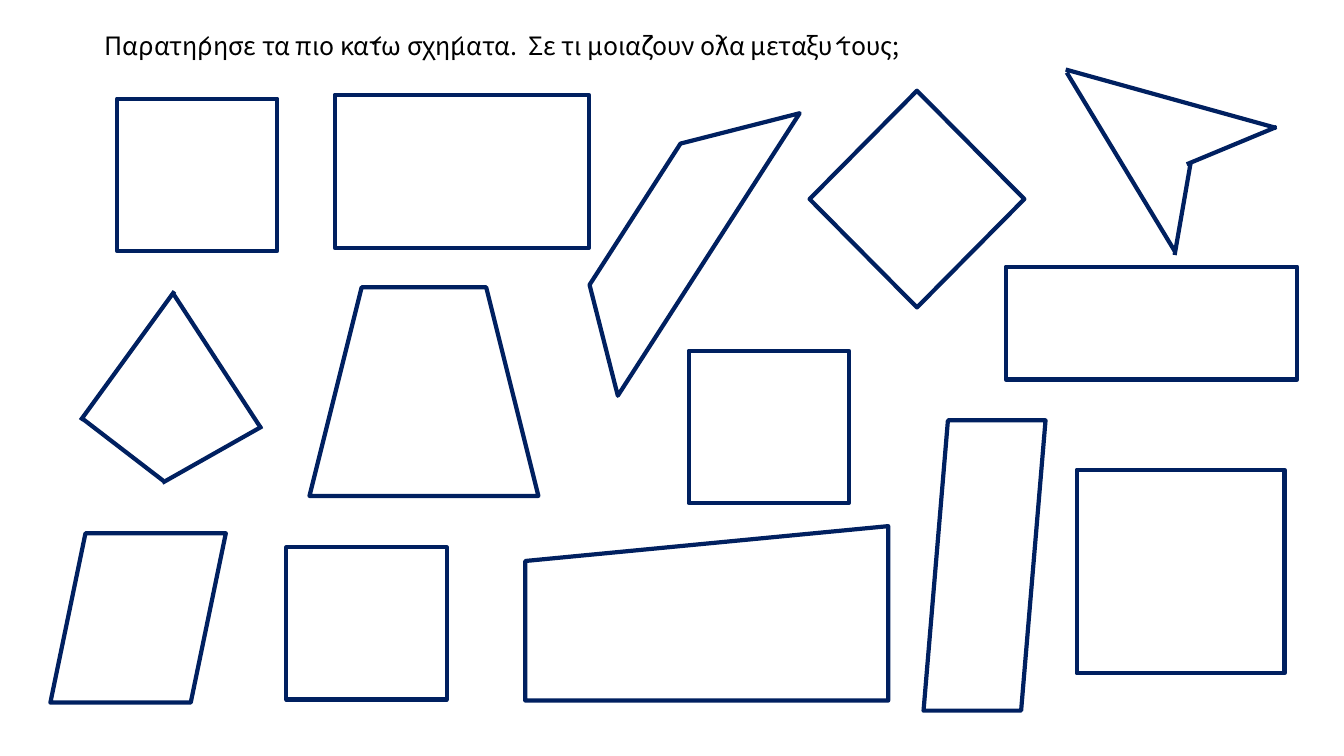
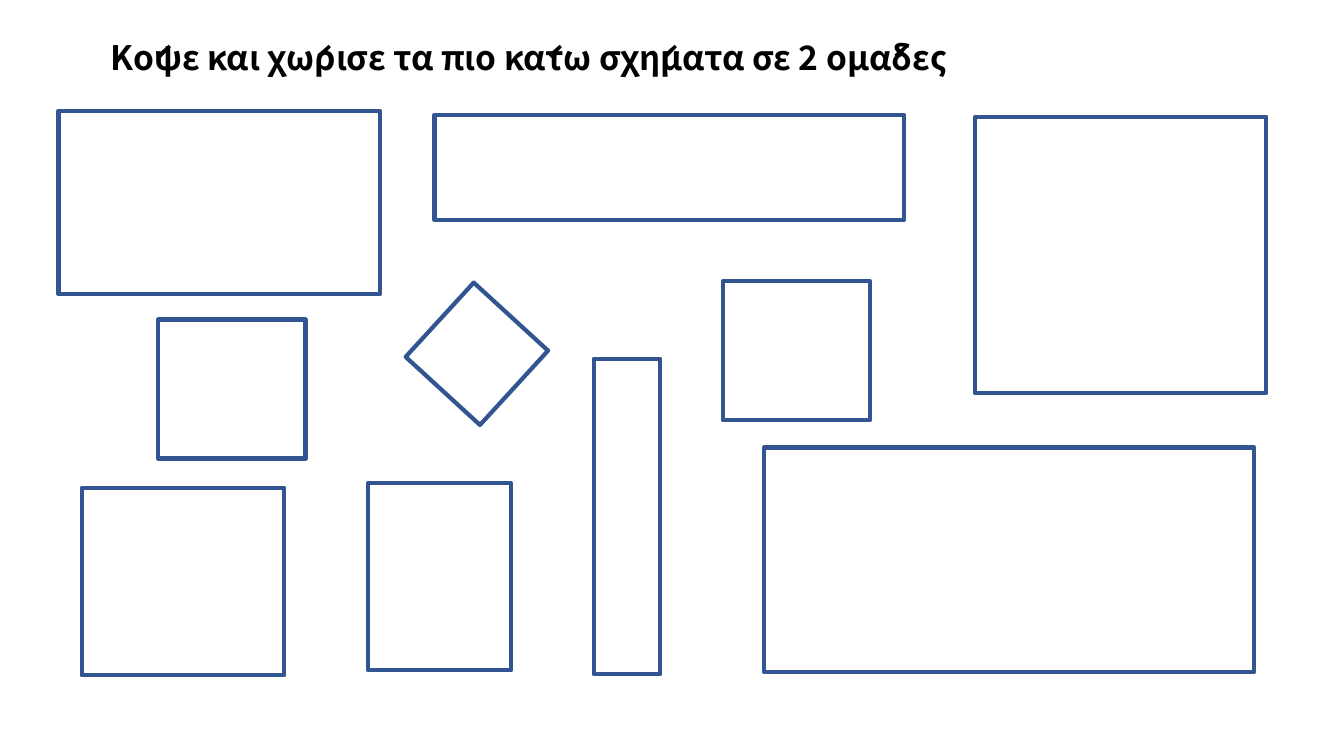
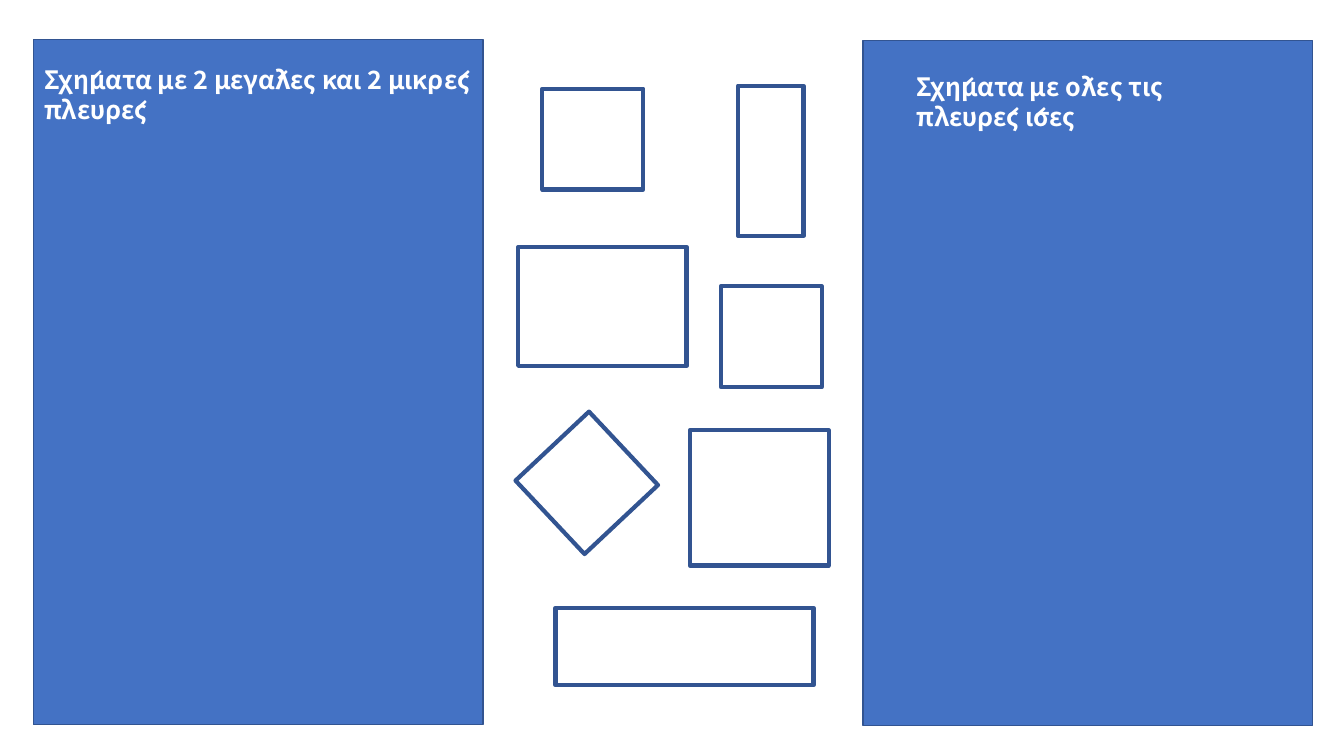
from lxml.etree import SubElement
from pptx import Presentation
from pptx.dml.color import RGBColor
from pptx.enum.shapes import MSO_CONNECTOR, MSO_SHAPE
from pptx.enum.text import MSO_AUTO_SIZE
from pptx.oxml.ns import qn
from pptx.util import Inches, Pt

FONT = "Noto Sans CJK KR"
COLORS = {
    "navy": "002060",
    "blue": "325491",
    "panel": "4472C4",
    "black": "000000",
    "white": "FFFFFF",
}
RECT = MSO_SHAPE.RECTANGLE
SLANT = MSO_SHAPE.FLOWCHART_DATA
SQUARE = (1.59, 1.51)
SMALL = (1.46, 1.38)
UNIT = (1, 1)

# Each figure: left, top, (width, height), then kind and rotation if needed
MIXED = [
    (3.32, 0.94, (2.52, 1.52)),
    (5.81, 1.39, (2.44, 2.27), MSO_SHAPE.DIAGONAL_STRIPE, 345.7),
    (0.5, 5.29, (1.74, 1.68), SLANT),
    (2.84, 5.43, SQUARE),
    (3.07, 2.85, (2.27, 2.07), MSO_SHAPE.TRAPEZOID),
    (1.16, 0.98, SQUARE),
    (8.03, 0.9, (2.13, 2.15), MSO_SHAPE.DIAMOND),
    (6.83, 3.48, SQUARE),
    (10.86, 1.76, (1.12, 2.89), RECT, 90),
    (5.21, 5.22, (3.6, 1.73), MSO_SHAPE.FLOWCHART_MANUAL_INPUT),
    (9.16, 4.17, (1.21, 2.88), SLANT),
    (10.68, 4.66, (2.06, 2.02)),
]
ARROW = [
    (10.57, 0.69, 12.66, 1.27),
    (10.58, 0.72, 11.65, 2.49),
    (11.65, 2.53, 11.81, 1.61),
    (12.66, 1.26, 11.77, 1.63),
]
KITE = [
    (1.71, 2.9, 2.59, 4.25),
    (1.73, 2.89, 0.8, 4.17),
    (0.8, 4.14, 1.62, 4.77),
    (2.6, 4.23, 1.61, 4.79),
]
CUTOUTS = [
    (0.58, 1.1, (3.19, 1.82)),
    (4.31, 1.14, (4.66, 1.04)),
    (0.81, 4.84, (2.01, 1.86)),
    (1.57, 3.17, SMALL),
    (5.89, 3.56, (0.66, 3.13)),
    (3.65, 4.79, (1.42, 1.86)),
    (7.17, 2.79, SMALL),
    (9.67, 1.16, (2.89, 2.74)),
    (7.58, 4.44, (4.86, 2.23)),
    (4.23, 3.01, UNIT, RECT, 312.5),
]
SORTING = [
    (5.38, 0.88, UNIT),
    (7.32, 0.85, (0.65, 1.49)),
    (5.14, 2.45, (1.67, 1.18)),
    (6.84, 4.27, (1.38, 1.34)),
    (5.32, 4.29, UNIT, RECT, 316.8),
    (5.51, 6.03, (2.56, 0.77)),
    (7.15, 2.84, UNIT),
]


def color(name):
    return RGBColor.from_string(COLORS[name])


def add_figure(slide, tint, left, top, size, kind=RECT, turn=0, fill=None, weight=3):
    box = map(Inches, (left, top, *size))
    shape = slide.shapes.add_shape(kind, *box)
    shape.shadow.inherit = False
    shape.rotation = turn
    if fill:
        shape.fill.solid()
        shape.fill.fore_color.rgb = color(fill)
    else:
        shape.fill.background()
    shape.line.color.rgb = color(tint)
    shape.line.width = Pt(weight)


def add_figures(slide, tint, figures):
    for figure in figures:
        add_figure(slide, tint, *figure)


def add_side(slide, tint, *ends):
    line = slide.shapes.add_connector(MSO_CONNECTOR.STRAIGHT, *map(Inches, ends))
    line.line.color.rgb = color(tint)
    line.line.width = Pt(3)
    SubElement(line._element.spPr, qn("a:effectLst"))


def add_text(slide, text, left, top, width, height, size=18, tint="black", bold=False):
    box = slide.shapes.add_textbox(*map(Inches, (left, top, width, height)))
    frame = box.text_frame
    frame.word_wrap = True
    frame.auto_size = MSO_AUTO_SIZE.SHAPE_TO_FIT_TEXT
    run = frame.paragraphs[0].add_run()
    run.text = text
    run.font.name = FONT
    run.font.size = Pt(size)
    run.font.bold = bold
    run.font.color.rgb = color(tint)


def add_panel(slide, left, top):
    add_figure(slide, "blue", left, top, (4.46, 6.8), fill="panel", weight=1)


def draw_mixed(slide):
    add_figures(slide, "navy", MIXED)
    for side in ARROW + KITE:
        add_side(slide, "navy", *side)
    add_text(slide, "Παρατήρησε τα πιο κάτω σχήματα.  Σε τι μοιάζουν όλα μεταξύ τους;",
             0.94, 0.25, 9.29, 0.4)


def draw_cutouts(slide):
    add_figures(slide, "blue", CUTOUTS)
    add_text(slide, "Κόψε και χώρισε τα πιο κάτω σχήματα σε 2 ομάδες",
             1, 0.32, 11.39, 0.5, size=24, bold=True)


def draw_sorting(slide):
    add_panel(slide, 0.33, 0.39)
    add_text(slide, "Σχήματα με 2 μεγάλες και 2 μικρές πλευρές",
             0.34, 0.59, 4.56, 0.71, tint="white", bold=True)
    add_panel(slide, 8.56, 0.4)
    add_text(slide, "Σχήματα με όλες τις πλευρές ίσες",
             8.99, 0.66, 3.36, 0.71, tint="white", bold=True)
    add_figures(slide, "blue", SORTING)


def main():
    deck = Presentation()
    deck.slide_width = Inches(13.33)
    deck.slide_height = Inches(7.5)
    for draw in (draw_mixed, draw_cutouts, draw_sorting):
        draw(deck.slides.add_slide(deck.slide_layouts[6]))
    deck.save("out.pptx")


if __name__ == "__main__":
    main()
